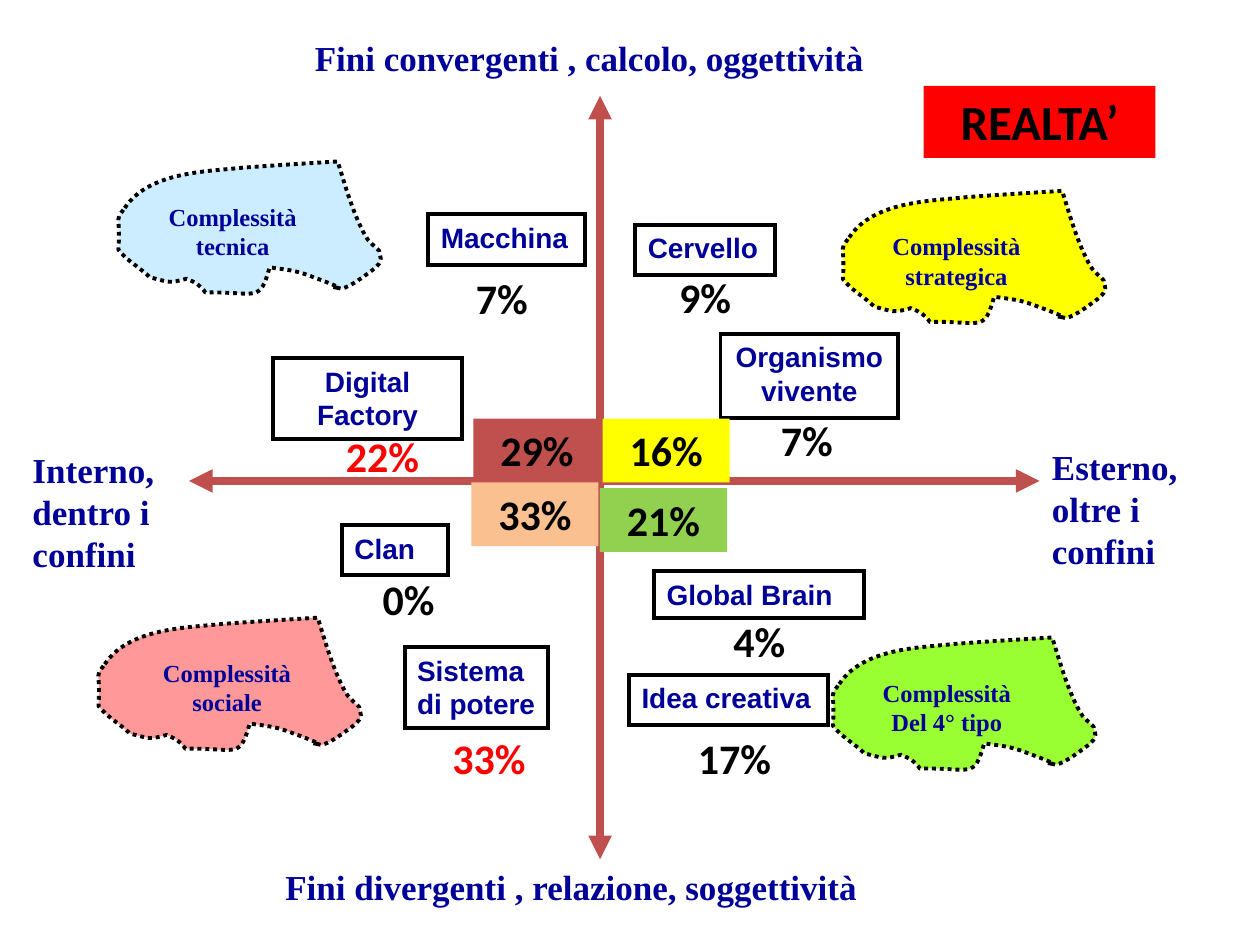
from lxml import etree
from pptx import Presentation
from pptx.dml.color import RGBColor
from pptx.enum.dml import MSO_LINE_DASH_STYLE as Dash
from pptx.enum.shapes import MSO_CONNECTOR as Connector, MSO_SHAPE as Shape
from pptx.enum.text import MSO_ANCHOR as Anchor, MSO_AUTO_SIZE as AutoSize, PP_ALIGN as Align
from pptx.oxml.ns import qn
from pptx.util import Pt

COLORS = {
    "navy": "000099", "black": "000000", "red": "FF0000", "brick": "C0504D",
    "yellow": "FFFF00", "peach": "FAC090", "green": "92D050",
    "sky": "CCECFF", "lime": "99FF33", "pink": "FF9999",
}
CLOUD_START = (6.5, 26.6)
CLOUD_CURVES = [
    ((20.2, 5.8), (53.3, 5.8), (73.4, 3.6)),
    ((91.4, 2.2), (128.2, 0), (128.2, 0)),
    ((132.5, 13.7), (136.8, 29.5), (144, 42.5)),
    ((145.4, 45.4), (149, 48.2), (151.9, 51.1)),
    ((151.9, 53.3), (153.4, 55.4), (152.6, 56.9)),
    ((151.9, 59), (149.8, 60.5), (148.3, 61.9)),
    ((143.3, 65.5), (136.1, 71.3), (130.3, 72.7)),
    ((115.2, 69.1), (144, 77), (114.5, 66.2)),
    ((103.7, 61.9), (98.6, 61.9), (89.3, 60.5)),
    ((83.5, 81.4), (82.1, 74.2), (52.6, 74.9)),
    ((49.7, 70.6), (46.8, 69.1), (41.8, 67)),
    ((31.7, 69.8), (32.4, 69.1), (20.9, 66.2)),
    ((15.1, 60.5), (7.9, 56.9), (2.9, 50.4)),
    ((4.3, 28.1), (0, 35.3), CLOUD_START),
]


def rgb(name):
    return RGBColor.from_string(COLORS[name])


def bend(cloud):
    corners = list(cloud._element.iter(qn("a:lnTo")))
    for first, second, end in zip(corners[::3], corners[1::3], corners[2::3]):
        curve = etree.Element(qn("a:cubicBezTo"))
        first.addprevious(curve)
        for corner in (first, second, end):
            curve.append(corner[0])
            corner.getparent().remove(corner)


def write(shape, text, font="Arial", size=16, color="navy", align=Align.LEFT, wrap=True):
    frame = shape.text_frame
    frame.word_wrap = wrap
    frame.auto_size = AutoSize.SHAPE_TO_FIT_TEXT
    frame.vertical_anchor = Anchor.TOP
    frame.text = text
    for paragraph in frame.paragraphs:
        paragraph.alignment = align
        for run in paragraph.runs:
            run.font.name = font
            run.font.size = Pt(size)
            run.font.bold = True
            run.font.color.rgb = rgb(color)


class Board:
    serif = "Times New Roman"
    figures = "Calibri"
    border = 2.25

    def __init__(self, slide):
        self.slide = slide

    def axis(self, *ends):
        line = self.slide.shapes.add_connector(Connector.STRAIGHT, *map(Pt, ends))
        line.line.color.rgb = rgb("brick")
        line.line.width = Pt(4.5)
        outline = line.line._get_or_add_ln()
        for end in ("a:headEnd", "a:tailEnd"):
            etree.SubElement(outline, qn(end), type="triangle")
        etree.SubElement(line._element.spPr, qn("a:effectLst"))

    def label(self, text, *place, **style):
        write(self.slide.shapes.add_textbox(*map(Pt, place)), text, **style)

    def pole(self, text, *place):
        self.label(text, *place, font=self.serif, size=20)

    def percent(self, text, *place, color="black"):
        self.label(text, *place, font=self.figures, size=24, color=color, align=Align.CENTER)

    def rectangle(self, *place):
        shape = self.slide.shapes.add_shape(Shape.RECTANGLE, *map(Pt, place))
        shape.shadow.inherit = False
        return shape

    def metaphor(self, text, *place, **style):
        box = self.rectangle(*place)
        box.fill.background()
        box.line.color.rgb = rgb("black")
        box.line.width = Pt(self.border)
        etree.SubElement(box.line._get_or_add_ln(), qn("a:miter"), lim="800000")
        write(box, text, **style)

    def tile(self, text, *place, fill, size=24):
        box = self.rectangle(*place)
        box.fill.solid()
        box.fill.fore_color.rgb = rgb(fill)
        box.line.fill.background()
        write(box, text, font=self.figures, size=size, color="black", align=Align.CENTER)

    def cloud(self, text, left, top, text_left, fill):
        start, *points = [(Pt(left + x), Pt(top + y))
                          for x, y in [CLOUD_START, *sum(CLOUD_CURVES, ())]]
        builder = self.slide.shapes.build_freeform(*start, scale=1.0)
        builder.add_line_segments(points, close=True)
        cloud = builder.convert_to_shape()
        bend(cloud)
        cloud.shadow.inherit = False
        cloud.fill.solid()
        cloud.fill.fore_color.rgb = rgb(fill)
        cloud.line.color.rgb = rgb("black")
        cloud.line.width = Pt(self.border)
        cloud.line.dash_style = Dash.ROUND_DOT
        self.label(text, text_left, top + 19.5, 88, 41, font=self.serif, size=14,
                   align=Align.CENTER, wrap=False)


def main():
    deck = Presentation()
    deck.slide_width, deck.slide_height = Pt(720), Pt(540)
    board = Board(deck.slides.add_slide(deck.slide_layouts[6]))

    board.axis(342.9, 54.7, 342.9, 491)
    board.axis(108, 274.8, 594, 274.8)

    board.pole("Fini divergenti , relazione, soggettività", 156, 491, 374.4, 31.5)
    board.pole("Fini convergenti , calcolo, oggettività", 172.8, 17.3, 329.8, 31.5)
    board.pole("Interno, dentro i confini", 11.5, 252.7, 96.5, 80)
    board.pole("Esterno, oltre i confini", 594, 251, 126, 80)

    board.metaphor("Macchina", 244.8, 122.4, 89.3, 29, wrap=False)
    board.metaphor("Digital Factory", 156.1, 204.7, 108, 46, align=Align.CENTER)
    board.metaphor("Clan", 195.5, 300, 60.5, 28.8, wrap=False)
    board.metaphor("Sistema di potere", 231.3, 369.8, 82.1, 46)
    board.metaphor("Idea creativa", 359.5, 385.6, 113.8, 28.8, wrap=False)
    board.metaphor("Global Brain", 373.9, 326.4, 119.7, 26.8, wrap=False)
    board.metaphor("Organismo\nvivente", 411.7, 190.7, 101.5, 48,
                   align=Align.CENTER, wrap=False)
    board.metaphor("Cervello", 363.1, 128.5, 79.9, 28.8, wrap=False)

    board.cloud("Complessità\ntecnica", 64.8, 92.3, 89, "sky")
    board.cloud("Complessità\nstrategica", 478.8, 109.1, 502.6, "yellow")
    board.cloud("Complessità\nDel 4° tipo", 473.1, 364.3, 497.1, "lime")
    board.cloud("Complessità\nsociale", 53.4, 353, 85.8, "pink")

    board.percent("7%", 261.9, 152.3, 49.7, 36)
    board.percent("7%", 436.1, 233.2, 49.7, 36)
    board.percent("17%", 388.8, 415.1, 61.9, 36)
    board.percent("9%", 378, 151.6, 49.7, 36)
    board.percent("33%", 247.7, 415.1, 63.4, 36, color="red")
    board.percent("4%", 409, 348.2, 49.7, 36)
    board.percent("22%", 185, 242.6, 67, 36, color="red")
    board.percent("0%", 208.6, 324.4, 49.7, 36)

    board.tile("29%", 270.5, 239.3, 72.7, 36.4, fill="brick")
    board.tile("16%", 344.3, 239.3, 72.7, 36.4, fill="yellow")
    board.tile("33%", 269.3, 275.7, 72.7, 36.4, fill="peach")
    board.tile("21%", 342.8, 279, 72.7, 36.4, fill="green")
    board.tile("REALTA’", 527.8, 49, 132.5, 41.2, fill="red", size=28)

    deck.save("out.pptx")


if __name__ == "__main__":
    main()
